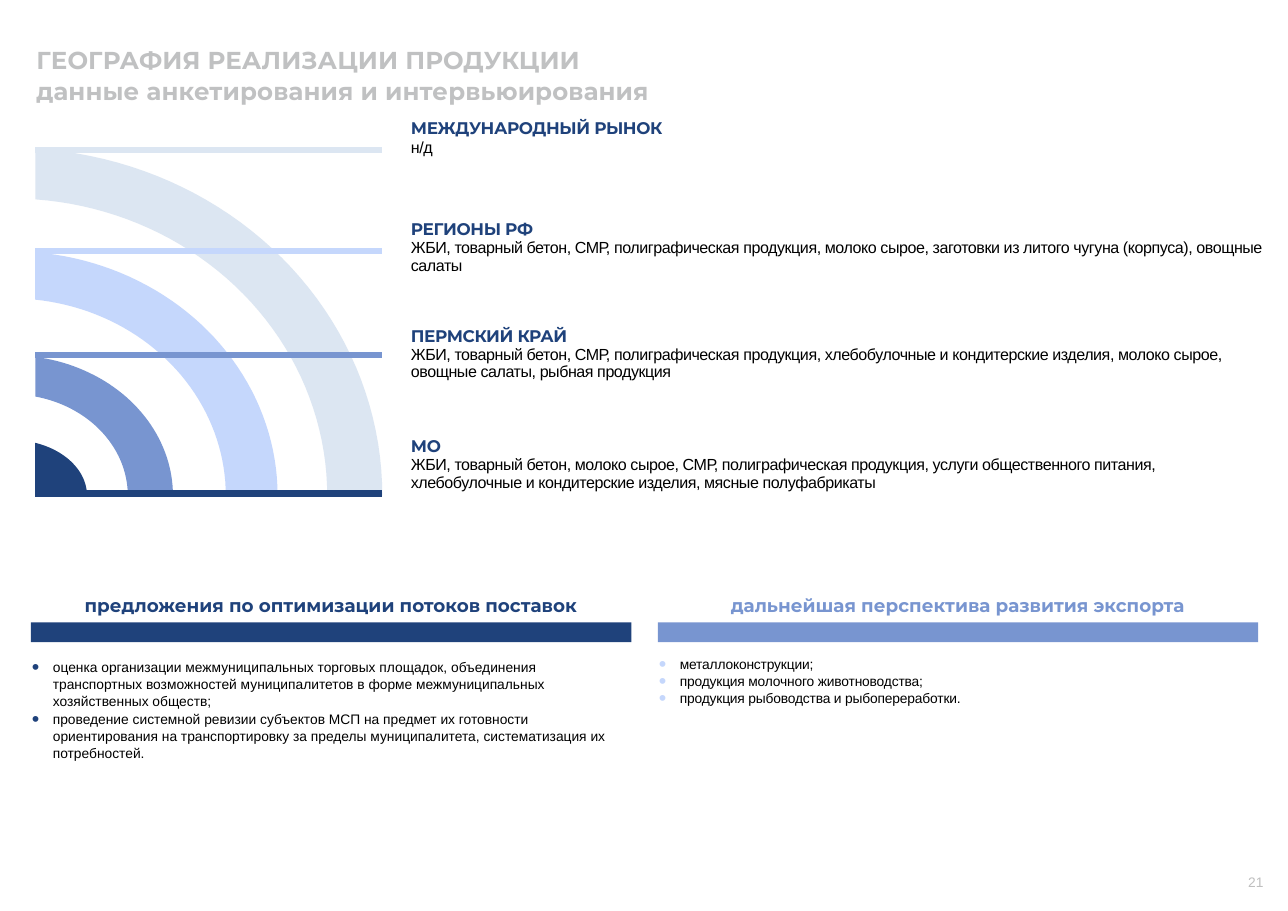
from math import acos, cos, sin, sqrt

from lxml.etree import SubElement
from pptx import Presentation
from pptx.dml.color import RGBColor
from pptx.enum.shapes import MSO_CONNECTOR, MSO_SHAPE
from pptx.enum.text import MSO_ANCHOR, MSO_AUTO_SIZE, PP_ALIGN
from pptx.oxml.ns import qn
from pptx.util import Inches, Pt

NAVY = RGBColor(0x1F, 0x42, 0x7B)
BLUE = RGBColor(0x78, 0x95, 0xD0)
SKY = RGBColor(0xC5, 0xD7, 0xFC)
ICE = RGBColor(0xDC, 0xE6, 0xF2)
GREY = RGBColor(0xC0, 0xC1, 0xC2)
PALE_GREY = RGBColor(0xBF, 0xBF, 0xBF)
BLACK = RGBColor(0, 0, 0)

LEFT, BASE, CENTER, LINE_END = 0.32, 4.5, 0.1, 3.47
ARC_STEPS = 40

MARKETS = [
    (1.09, "МЕЖДУНАРОДНЫЙ РЫНОК", "н/д"),
    (2, "РЕГИОНЫ РФ",
     "ЖБИ, товарный бетон, СМР, полиграфическая продукция, молоко сырое, "
     "заготовки из литого чугуна (корпуса), овощные салаты"),
    (2.97, "ПЕРМСКИЙ КРАЙ",
     "ЖБИ, товарный бетон, СМР, полиграфическая продукция, хлебобулочные и "
     "кондитерские изделия, молоко сырое, овощные салаты, рыбная продукция"),
    (3.97, "МО",
     "ЖБИ, товарный бетон, молоко сырое, СМР, полиграфическая продукция, "
     "услуги общественного питания, хлебобулочные и кондитерские изделия, "
     "мясные полуфабрикаты"),
]
BANDS = [
    (ICE, (3.47, 1.35), (2.97, 1.81)),
    (SKY, (2.52, 2.29), (2.05, 2.72)),
    (BLUE, (1.57, 3.24), (1.16, 3.6)),
    (NAVY, (0.79, 4.02), None),
]
LEVELS = [(ICE, 1.36), (SKY, 2.28), (BLUE, 3.22), (NAVY, 4.48)]
PROPOSALS = [
    "оценка организации межмуниципальных торговых площадок, объединения "
    "транспортных возможностей муниципалитетов в форме межмуниципальных "
    "хозяйственных обществ;",
    "проведение системной ревизии субъектов МСП на предмет их готовности "
    "ориентирования на транспортировку за пределы муниципалитета, "
    "систематизация их потребностей.",
]
EXPORTS = [
    "металлоконструкции;",
    "продукция молочного животноводства;",
    "продукция рыбоводства и рыбопереработки.",
]


def font_format(name, size, color, bold=False):
    return {"name": name, "size": Pt(size), "bold": bold, "color": color}


def arc(right, top):
    radius_x = right - CENTER
    offset = (LEFT - CENTER) / radius_x
    radius_y = (BASE - top) / sqrt(1 - offset ** 2)
    start = acos(offset)
    angles = [start * (1 - step / ARC_STEPS) for step in range(ARC_STEPS + 1)]
    return [(CENTER + radius_x * cos(angle), BASE - radius_y * sin(angle))
            for angle in angles]


class SlideBuilder:
    TITLE = font_format("Montserrat", 16, GREY, True)
    MARKET = font_format("Montserrat", 11, NAVY, True)
    GOODS = font_format("Arial", 10.5, BLACK)
    LIST = font_format("Arial", 9, BLACK)
    NUMBER = font_format("Arial", 9, PALE_GREY)

    def __init__(self, slide):
        self.slide = slide

    def frame(self, shape, box, margins):
        shape.left, shape.top, shape.width, shape.height = map(Inches, box)
        values = dict(zip(
            ("margin_left", "margin_top", "margin_right", "margin_bottom"),
            map(Inches, margins)))
        values.update(word_wrap=True, auto_size=MSO_AUTO_SIZE.NONE,
                      vertical_anchor=MSO_ANCHOR.TOP)
        for name, value in values.items():
            setattr(shape.text_frame, name, value)

    def add_lines(self, shape, lines, spacing=0, **paragraph_format):
        text_frame = shape.text_frame
        values = {"alignment": PP_ALIGN.LEFT, "space_before": Pt(0)}
        values.update(paragraph_format)
        for index, (text, font) in enumerate(lines):
            paragraph = text_frame.add_paragraph() if index else text_frame.paragraphs[0]
            for name, value in values.items():
                setattr(paragraph, name, value)
            run = paragraph.add_run()
            run.text = text
            for name, value in font.items():
                if name == "color":
                    run.font.color.rgb = value
                else:
                    setattr(run.font, name, value)
            run.font._element.set("spc", str(round(spacing * 100)))

    def placeholder(self, index, box, margins, lines, **options):
        shape = self.slide.placeholders[index]
        self.frame(shape, box, margins)
        self.add_lines(shape, lines, **options)
        return shape

    def textbox(self, box, margins, lines, **options):
        shape = self.slide.shapes.add_textbox(*map(Inches, box))
        self.frame(shape, box, margins)
        self.add_lines(shape, lines, **options)

    def bullets(self, index, box, items, color, **options):
        shape = self.placeholder(index, box, (0, 0.01, 0, 0),
                                 [(item, self.LIST) for item in items],
                                 line_spacing=Pt(11), **options)
        for paragraph in shape.text_frame.paragraphs:
            properties = paragraph._p.get_or_add_pPr()
            properties.set("marL", str(Inches(0.2)))
            properties.set("indent", str(Inches(-0.19)))
            bullet_color = SubElement(properties, qn("a:buClr"))
            SubElement(bullet_color, qn("a:srgbClr"), val=str(color))
            SubElement(properties, qn("a:buSzPct"), val="155000")
            SubElement(properties, qn("a:buFont"), typeface="Arial")
            SubElement(properties, qn("a:buChar"), char="•")

    def paint(self, shape, color):
        shape.shadow.inherit = False
        shape.fill.solid()
        shape.fill.fore_color.rgb = color
        shape.line.fill.background()

    def bar(self, box, color):
        self.paint(self.slide.shapes.add_shape(
            MSO_SHAPE.RECTANGLE, *map(Inches, box)), color)

    def band(self, color, outer, inner):
        inner_edge = arc(*inner)[::-1] if inner else [(LEFT, BASE)]
        points = [(Inches(x), Inches(y)) for x, y in arc(*outer) + inner_edge]
        builder = self.slide.shapes.build_freeform(*points[0])
        builder.add_line_segments(points[1:], close=True)
        self.paint(builder.convert_to_shape(), color)

    def level(self, color, top):
        line = self.slide.shapes.add_connector(
            MSO_CONNECTOR.STRAIGHT, Inches(LEFT), Inches(top),
            Inches(LINE_END), Inches(top))
        line.line.color.rgb = color
        line.line.width = Pt(4)
        SubElement(line._element.spPr, qn("a:effectLst"))


def main():
    presentation = Presentation()
    presentation.slide_width = Inches(11.69)
    presentation.slide_height = Inches(8.27)
    slide = presentation.slides.add_slide(presentation.slide_layouts[4])
    builder = SlideBuilder(slide)

    builder.placeholder(
        0, (0.33, 0.36, 11.09, 0.65), (0, 0.05, 0.1, 0.05),
        [("ГЕОГРАФИЯ РЕАЛИЗАЦИИ ПРОДУКЦИИ", builder.TITLE),
         ("данные анкетирования и интервьюирования", builder.TITLE)],
        spacing=0.1, space_before=Pt(1))

    for band in BANDS:
        builder.band(*band)
    for level in LEVELS:
        builder.level(*level)
    for top, market, goods in MARKETS:
        builder.textbox((3.73, top, 7.8, 0.49), (0, 0.01, 0, 0),
                        [(market, builder.MARKET), (goods, builder.GOODS)],
                        spacing=-0.25, line_spacing=Pt(11.2), space_before=Pt(1))

    columns = [
        (1, 0.28, "предложения по оптимизации потоков поставок", NAVY),
        (3, 5.97, "дальнейшая перспектива развития экспорта", BLUE),
    ]
    for index, left, heading, color in columns:
        builder.placeholder(
            index, (left, 5.39, 5.45, 0.2), (0, 0, 0, 0),
            [(heading, font_format("Montserrat", 12, color, True))],
            alignment=PP_ALIGN.CENTER)
        builder.bar((left, 5.65, 5.45, 0.18), color)
    builder.bullets(2, (0.28, 5.97, 5.42, 0.95), PROPOSALS, NAVY, space_before=Pt(1))
    builder.bullets(4, (5.97, 5.94, 5.45, 0.48), EXPORTS, SKY, spacing=-0.1)

    builder.textbox((11.23, 7.88, 0.45, 0.27), (0.1, 0.05, 0.1, 0.05),
                    [("21", builder.NUMBER)])
    presentation.save("out.pptx")


if __name__ == "__main__":
    main()
